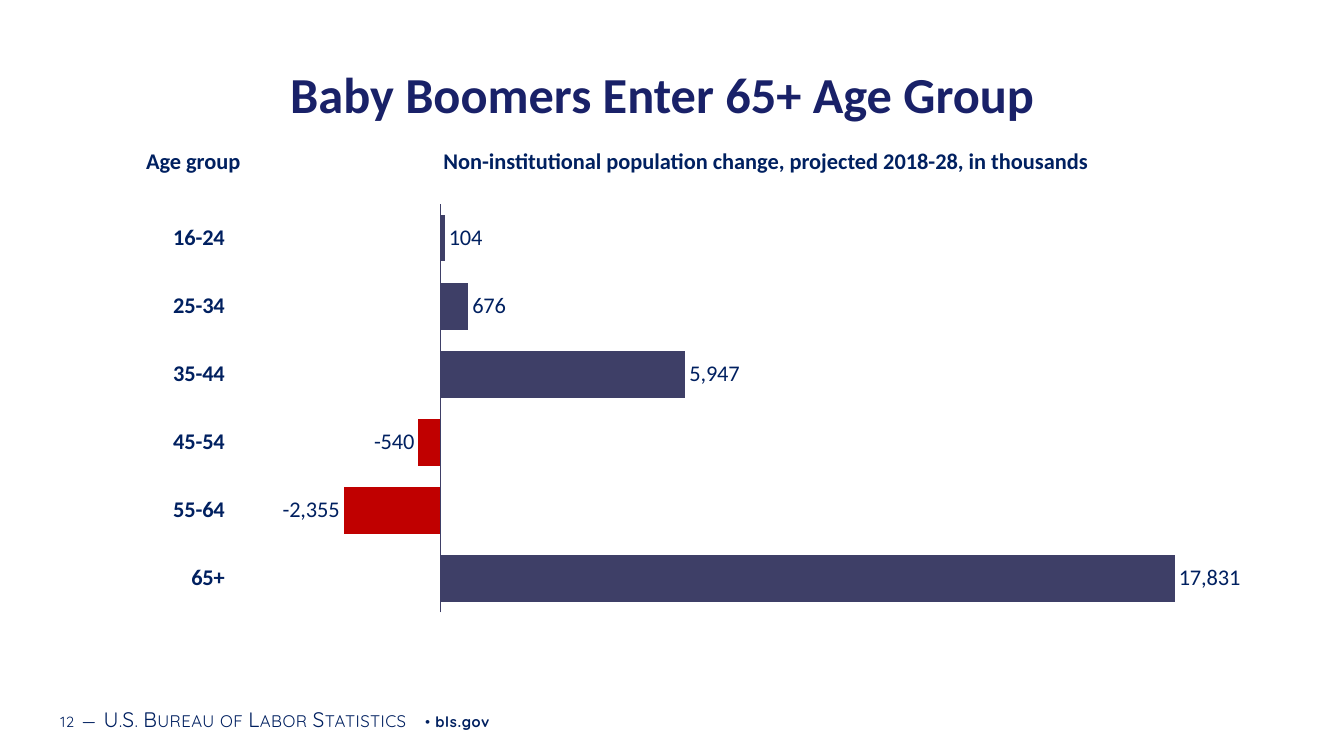
from lxml import etree
from pptx import Presentation
from pptx import util as u
from pptx.chart.data import CategoryChartData
from pptx.dml.color import RGBColor
from pptx.enum import chart as ce
from pptx.enum import text as te
from pptx.oxml.ns import qn

TITLE = "Baby Boomers Enter 65+ Age Group"
HEADINGS = [
    ("Age group", 1.35, 1.51),
    ("Non-institutional population change, projected 2018-28, in thousands", 4.3, 6.97),
]
CHANGES = {
    "16-24": 104,
    "25-34": 676,
    "35-44": 5947,
    "45-54": -540,
    "55-64": -2355,
    "65+": 17831,
}
CAPS = {"cap": "small", "spc": "30"}
WIDE = {"spc": "50"}
FOOTER = [
    ("12", 10.5, False, WIDE),
    (" ", 16, False, WIDE),
    ("—", 15, False, CAPS),
    (" ", 16, False, WIDE),
    ("U.S. Bureau of Labor Statistics", 15, False, CAPS),
    (" • ", 10.5, False, WIDE),
    ("bls.gov", 10.5, True, WIDE),
]
PLOT_SHARES = {"x": 0.086, "y": 0.072, "w": 0.899, "h": 0.928}

WHITE = RGBColor(0xFF, 0xFF, 0xFF)
NAVY = RGBColor(0x00, 0x20, 0x60)
INDIGO = RGBColor(0x19, 0x21, 0x68)
SLATE = RGBColor(0x3E, 0x3F, 0x67)
RED = RGBColor(0xC0, 0x00, 0x00)


def style(font, size=16, color=NAVY, bold=False, name="Calibri"):
    font.size, font.bold, font.name = u.Pt(size), bold, name
    font.color.rgb = color


def write(para, words, extras=None, **look):
    span = para.add_run()
    span.text = words
    style(span.font, **look)
    for key, value in (extras or {}).items():
        span.font._element.set(key, value)


def place(shape, left, top, width, height):
    shape.left, shape.top = u.Inches(left), u.Inches(top)
    shape.width, shape.height = u.Inches(width), u.Inches(height)


def add_box(page, *area):
    box = page.shapes.add_textbox(*map(u.Inches, area))
    box.text_frame.word_wrap = True
    return box.text_frame


def set_plot_area(chart):
    area = chart._chartSpace.find(".//" + qn("c:plotArea"))
    for old in area.findall(qn("c:layout")):
        area.remove(old)
    layout = etree.Element(qn("c:layout"))
    manual = etree.SubElement(layout, qn("c:manualLayout"))
    settings = {"layoutTarget": "inner", "xMode": "edge", "yMode": "edge", **PLOT_SHARES}
    for key, value in settings.items():
        etree.SubElement(manual, qn("c:" + key)).set("val", str(value))
    area.insert(0, layout)


def add_bars(page, *area):
    data = CategoryChartData(number_format="#,##0")
    data.categories = list(CHANGES)
    data.add_series("Series 1", list(CHANGES.values()))
    chart = page.shapes.add_chart(
        ce.XL_CHART_TYPE.BAR_CLUSTERED, *map(u.Inches, area), data
    ).chart
    chart.has_legend = chart.has_title = False
    style(chart.font, size=10)
    set_plot_area(chart)

    ages = chart.category_axis
    ages.reverse_order = True
    ages.major_tick_mark = ages.minor_tick_mark = ce.XL_TICK_MARK.NONE
    ages.tick_label_position = ce.XL_TICK_LABEL_POSITION.LOW
    ages.format.line.color.rgb = SLATE
    ages.format.line.width = u.Pt(0.75)
    style(ages.tick_labels.font, bold=True)

    values = chart.value_axis
    values.minimum_scale, values.maximum_scale = -5000, 20000
    values.has_major_gridlines = False
    values.visible = False

    plot = chart.plots[0]
    plot.gap_width, plot.overlap = 45, 100
    plot.vary_by_categories = False
    series = plot.series[0]
    series.invert_if_negative = False
    series.format.fill.solid()
    series.format.fill.fore_color.rgb = SLATE
    for index, change in enumerate(CHANGES.values()):
        if change < 0:
            fill = series.points[index].format.fill
            fill.solid()
            fill.fore_color.rgb = RED

    labels = series.data_labels
    labels.show_value = True
    labels.position = ce.XL_LABEL_POSITION.OUTSIDE_END
    labels.number_format = "#,##0"
    labels.number_format_is_linked = False
    style(labels.font)


def main():
    deck = Presentation()
    deck.slide_width, deck.slide_height = u.Inches(13.33), u.Inches(7.5)
    page = deck.slides.add_slide(deck.slide_layouts[5])
    page.background.fill.solid()
    page.background.fill.fore_color.rgb = WHITE

    title = page.shapes.title
    place(title, 1.35, 0.34, 10.44, 1.17)
    title.text_frame.vertical_anchor = te.MSO_ANCHOR.MIDDLE
    para = title.text_frame.paragraphs[0]
    para.alignment = te.PP_ALIGN.CENTER
    write(para, TITLE, size=36, color=INDIGO, bold=True)

    add_bars(page, 1.35, 1.71, 11.36, 4.37)
    for words, left, width in HEADINGS:
        frame = add_box(page, left, 1.41, width, 0.37)
        write(frame.paragraphs[0], words, bold=True)

    frame = add_box(page, 0.53, 6.93, 8.47, 0.4)
    frame.vertical_anchor = te.MSO_ANCHOR.MIDDLE
    frame.margin_left = frame.margin_right = u.Inches(0.07)
    frame.margin_top = frame.margin_bottom = u.Inches(0.04)
    for words, size, bold, extras in FOOTER:
        write(frame.paragraphs[0], words, extras, size=size, bold=bold, name="Quicksand")

    deck.save("out.pptx")


if __name__ == "__main__":
    main()
